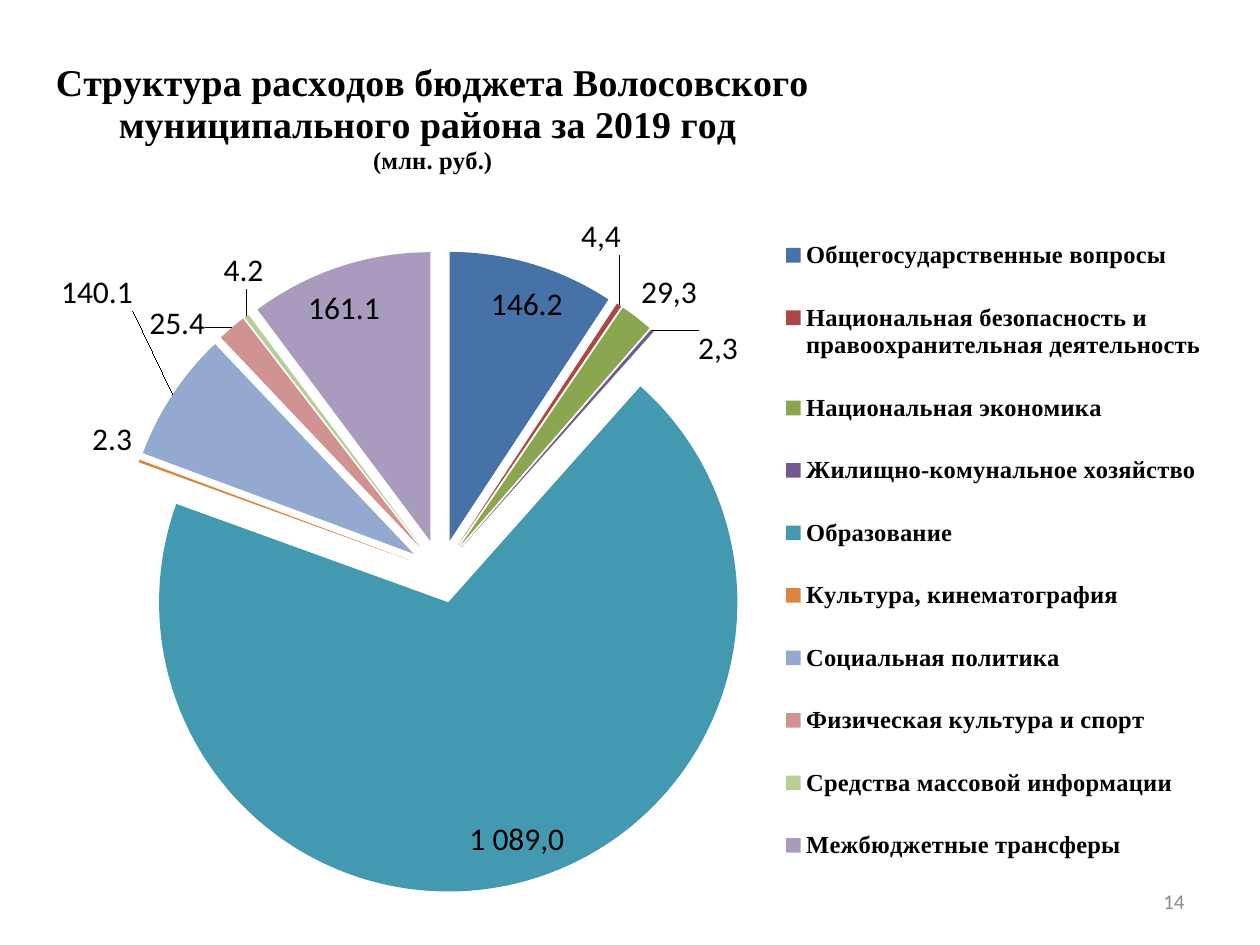
from lxml.etree import SubElement
from pptx import Presentation
from pptx.chart.data import CategoryChartData
from pptx.dml.color import RGBColor
from pptx.enum.chart import XL_CHART_TYPE, XL_LABEL_POSITION, XL_LEGEND_POSITION
from pptx.enum.text import MSO_ANCHOR, PP_ALIGN
from pptx.oxml.ns import qn
from pptx.util import Inches, Pt

WIDTH, HEIGHT = Inches(10), Inches(7.5)
COLORS = {"text": "000000", "number": "8C8C8C"}
TITLE_FORMAT = {"name": "Times New Roman", "size": Pt(21.6), "bold": True}
NOTE_FORMAT = {**TITLE_FORMAT, "size": Pt(14)}
LABEL_FORMAT = {"name": "Calibri", "size": Pt(18), "bold": False}
NUMBER_FORMAT = {"name": "Calibri", "size": Pt(12)}
INSIDE, OUTSIDE = XL_LABEL_POSITION.INSIDE_END, XL_LABEL_POSITION.OUTSIDE_END

# category, value, colour, label text, label position, label shift in percent
EXPENSES = [
    ("Общегосударственные вопросы", 146.2, "4672A8", None, INSIDE, (2.7, 1.6)),
    ("Национальная безопасность и правоохранительная деятельность",
     4.4, "AB4744", "4,4", OUTSIDE, (-3.5, -5)),
    ("Национальная экономика", 29.3, "8AA64F", "29,3", OUTSIDE, None),
    ("Жилищно-комунальное хозяйство", 2.9, "725990", "2,3", OUTSIDE, (3.4, 4.9)),
    ("Образование", 1089, "4299B0", "1 089,0", INSIDE, (3.9, -2)),
    ("Культура, кинематография", 2.3, "DC853E", None, OUTSIDE, None),
    ("Социальная политика", 114.6, "93A9CF", "140.1", OUTSIDE, (-2.8, -9.2)),
    ("Физическая культура и спорт", 25.4, "D19392", None, OUTSIDE, (-1.8, 2.3)),
    ("Средства массовой информации", 4.2, "B9CD96", None, OUTSIDE, (1.8, -2.4)),
    ("Межбюджетные трансферы", 161.1, "A99BBD", None, INSIDE, (-2.8, 1.8)),
]


def share(left, top, width, height):
    return (round(left / 100 * WIDTH), round(top / 100 * HEIGHT),
            round(width / 100 * WIDTH), round(height / 100 * HEIGHT))


def style(font, values, color="text"):
    for name, value in values.items():
        setattr(font, name, value)
    font.color.rgb = RGBColor.from_string(COLORS[color])


def set_layout(parent, index, edge=False, inner=False, **percents):
    for old in parent.findall(qn("c:layout")):
        parent.remove(old)
    layout = SubElement(parent, qn("c:layout"))
    parent.insert(index, layout)
    manual = SubElement(layout, qn("c:manualLayout"))
    if inner:
        SubElement(manual, qn("c:layoutTarget")).set("val", "inner")
    if edge:
        for mode in ("xMode", "yMode"):
            SubElement(manual, qn(f"c:{mode}")).set("val", "edge")
    for name, value in percents.items():
        SubElement(manual, qn(f"c:{name}")).set("val", f"{value / 100:.3f}")


def add_title(chart):
    chart.has_title = True
    frame = chart.chart_title.text_frame
    lines = [
        ("Структура расходов бюджета Волосовского муниципального района за 2019 год ",
         TITLE_FORMAT),
        ("(млн. руб.)", NOTE_FORMAT),
    ]
    for index, (text, values) in enumerate(lines):
        para = frame.add_paragraph() if index else frame.paragraphs[0]
        para.alignment = PP_ALIGN.CENTER
        span = para.add_run()
        span.text = text
        style(span.font, values)
    set_layout(chart.chart_title._element, 1, edge=True, x=1.4, y=1.3)
    chart.chart_title.include_in_layout = False


def add_legend(chart):
    chart.has_legend = True
    legend = chart.legend
    legend.position = XL_LEGEND_POSITION.RIGHT
    legend.include_in_layout = False
    style(legend.font, NOTE_FORMAT)
    set_layout(legend._element, 1, edge=True, x=61.3, y=18.7, w=37, h=79.7)


def style_slice(point, color, text, position, shift):
    point.format.fill.solid()
    point.format.fill.fore_color.rgb = RGBColor.from_string(color)
    label = point.data_label
    if text:
        span = label.text_frame.paragraphs[0].add_run()
        span.text = text
        style(span.font, LABEL_FORMAT)
    else:
        style(label.font, LABEL_FORMAT)
    label.position = position
    if shift:
        set_layout(label._dLbl, 1, x=shift[0], y=shift[1])


def add_expense_chart(page, box):
    data = CategoryChartData()
    data.categories = [row[0] for row in EXPENSES]
    data.add_series("Series 1", [row[1] for row in EXPENSES])
    chart = page.shapes.add_chart(XL_CHART_TYPE.PIE, *box, data).chart
    style(chart.font, LABEL_FORMAT)
    add_title(chart)
    add_legend(chart)
    plot = chart.plots[0]
    plot.vary_by_categories = True
    series = plot.series[0]
    for index, (_, _, *look) in enumerate(EXPENSES):
        style_slice(series.points[index], *look)
    series.data_labels.show_value = True
    explosion = SubElement(series._element, qn("c:explosion"))
    explosion.set("val", "11")
    series._element.find(qn("c:dPt")).addprevious(explosion)
    area = chart._chartSpace.chart.plotArea
    set_layout(area, 0, edge=True, inner=True, x=7, y=23.8, w=53.5, h=74.4)


def add_page_number(page, box):
    frame = page.shapes.add_textbox(*box).text_frame
    frame.word_wrap = True
    frame.vertical_anchor = MSO_ANCHOR.MIDDLE
    para = frame.paragraphs[0]
    para.alignment = PP_ALIGN.RIGHT
    span = para.add_run()
    span.text = "14"
    style(span.font, NUMBER_FORMAT, "number")


def main():
    deck = Presentation()
    deck.slide_width, deck.slide_height = WIDTH, HEIGHT
    page = deck.slides.add_slide(deck.slide_layouts[6])
    add_expense_chart(page, share(2.8, 4.8, 95.3, 91.3))
    add_page_number(page, share(71.7, 92.7, 23.3, 5.3))
    deck.save("out.pptx")


if __name__ == "__main__":
    main()
